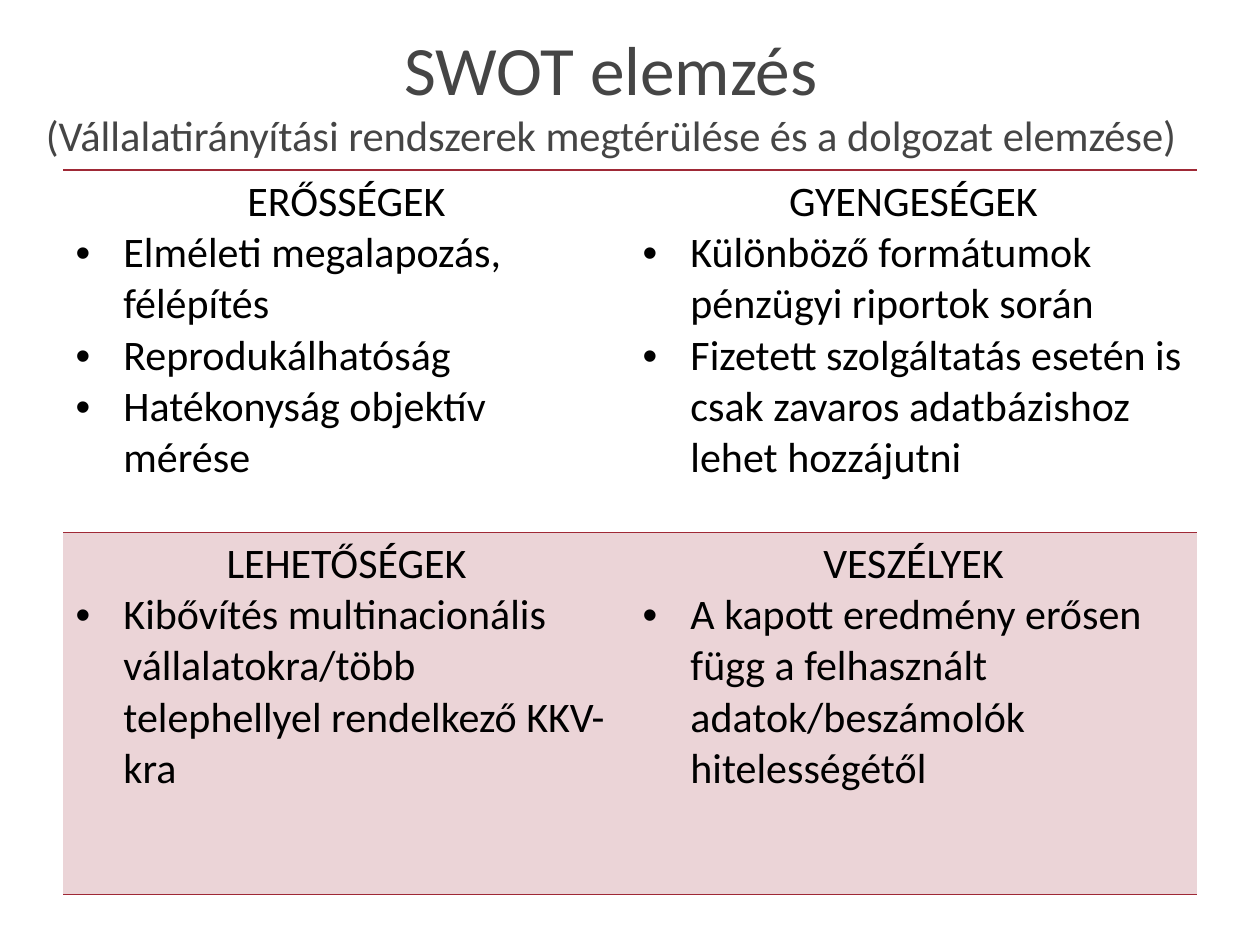
"""Build a SWOT slide: a two-line title above a two-by-two table."""
from lxml.etree import SubElement
from pptx import Presentation
from pptx.dml.color import RGBColor as Rgb
from pptx.enum.text import MSO_ANCHOR as Anchor, PP_ALIGN as Align
from pptx.oxml.ns import qn
from pptx.util import Inches, Pt

FONT = "Calibri"
INK = {"title": "454545", "text": "000000", "rule": "9F2936", "tint": "EBD4D7"}
TITLE = [
    ("SWOT elemzés", 39.6),
    ("(Vállalatirányítási rendszerek megtérülése és a dolgozat elemzése)", 24.3),
]
SWOT = [
    [
        ("ERŐSSÉGEK", [
            "Elméleti megalapozás, félépítés",
            "Reprodukálhatóság",
            "Hatékonyság objektív mérése",
        ]),
        ("GYENGESÉGEK", [
            "Különböző formátumok pénzügyi riportok során",
            "Fizetett szolgáltatás esetén is csak zavaros adatbázishoz lehet hozzájutni",
        ]),
    ],
    [
        ("LEHETŐSÉGEK", [
            "Kibővítés multinacionális vállalatokra/több telephellyel rendelkező KKV-kra",
        ]),
        ("VESZÉLYEK", [
            "A kapott eredmény erősen függ a felhasznált adatok/beszámolók hitelességétől",
        ]),
    ],
]


def add_run(para, text, size, color):
    run = para.add_run()
    run.text = text
    run.font.name = FONT
    run.font.size = Pt(size)
    run.font.color.rgb = Rgb.from_string(INK[color])


def add_title(slide):
    box = slide.shapes.add_textbox(Inches(0.2), Inches(0.13), Inches(9.3), Inches(1.22))
    frame = box.text_frame
    frame.word_wrap = True
    frame.vertical_anchor = Anchor.MIDDLE
    para = frame.paragraphs[0]
    para.alignment = Align.CENTER
    for i, (text, size) in enumerate(TITLE):
        if i:
            para.add_line_break()
        add_run(para, text, size, "title")


def set_bullet(para):
    props = para._p.get_or_add_pPr()
    props.set("marL", str(Inches(0.38)))
    props.set("indent", str(-Inches(0.38)))
    SubElement(props, qn("a:buFont"), typeface="Arial")
    SubElement(props, qn("a:buChar"), char="•")


def set_rules(cell):
    props = cell._tc.get_or_add_tcPr()
    for side in "LRTB":
        line = SubElement(props, qn(f"a:ln{side}"), w=str(Pt(1)))
        if side in "LR":
            SubElement(line, qn("a:noFill"))
        else:
            fill = SubElement(line, qn("a:solidFill"))
            SubElement(fill, qn("a:srgbClr"), val=INK["rule"])


def fill_cell(cell, head, items, tint):
    set_rules(cell)
    if tint:
        cell.fill.solid()
        cell.fill.fore_color.rgb = Rgb.from_string(INK["tint"])
    else:
        cell.fill.background()
    frame = cell.text_frame
    para = frame.paragraphs[0]
    para.alignment = Align.CENTER
    add_run(para, head, 24, "text")
    for item in items:
        para = frame.add_paragraph()
        set_bullet(para)
        add_run(para, item, 24, "text")


def add_swot(slide):
    table = slide.shapes.add_table(
        2, 2, Inches(0.5), Inches(1.35), Inches(9), Inches(5.75)
    ).table
    table.first_row = False
    table.horz_banding = False
    for r, row in enumerate(SWOT):
        for c, (head, items) in enumerate(row):
            fill_cell(table.cell(r, c), head, items, tint=r == 1)


def main():
    deck = Presentation()
    deck.slide_width, deck.slide_height = Inches(10), Inches(7.5)
    slide = deck.slides.add_slide(deck.slide_layouts[6])
    add_title(slide)
    add_swot(slide)
    deck.save("out.pptx")


if __name__ == "__main__":
    main()
